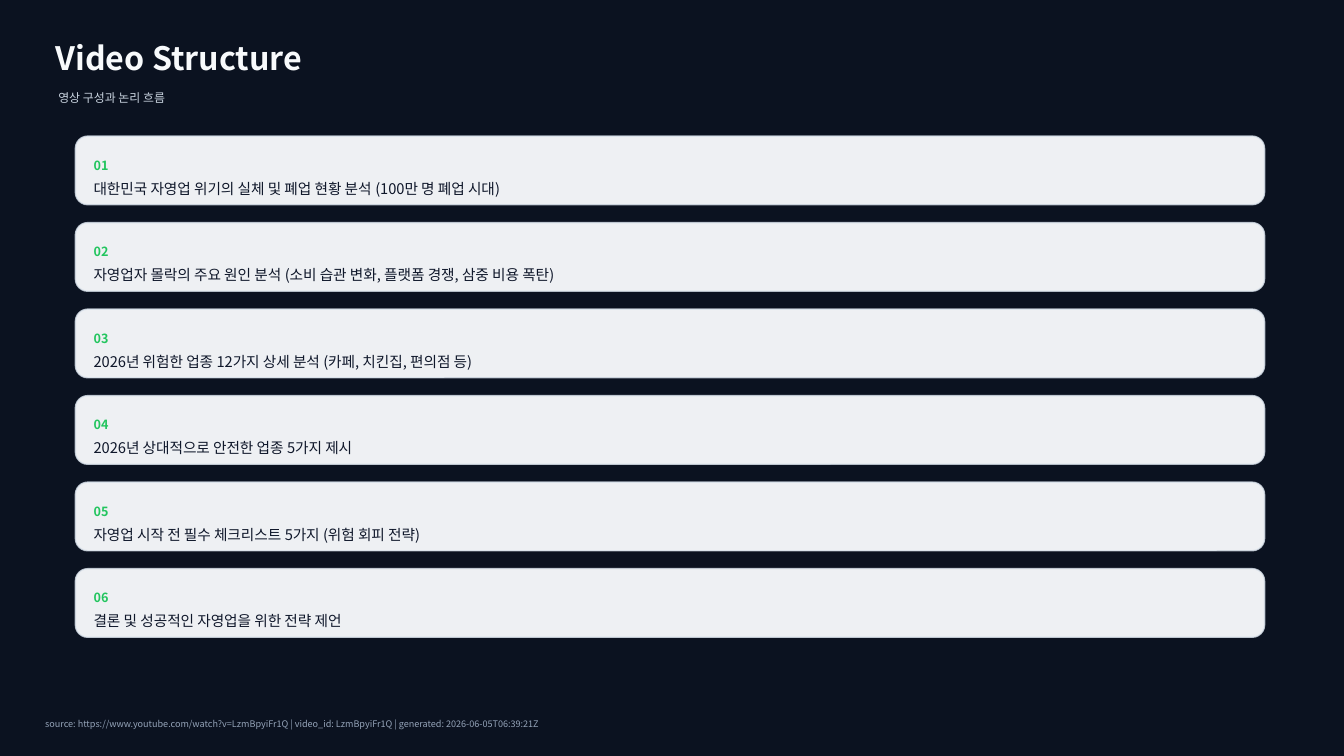
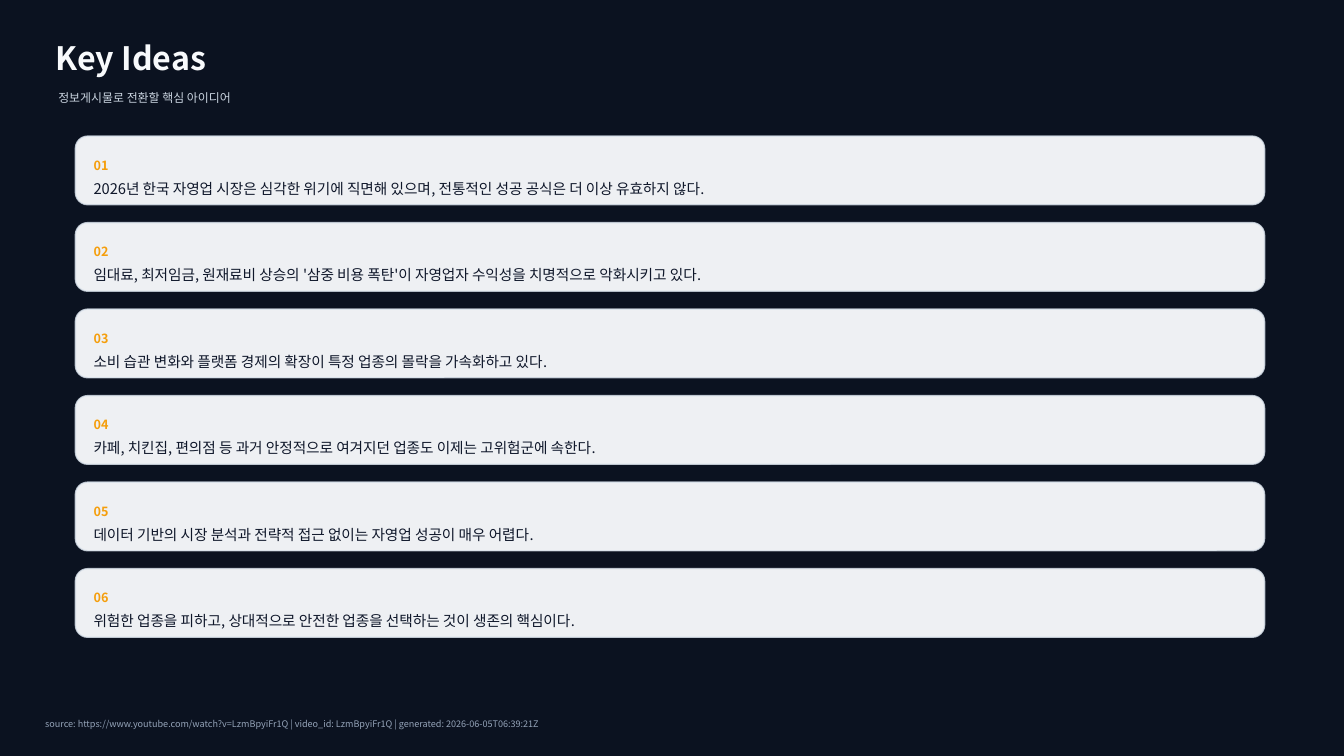
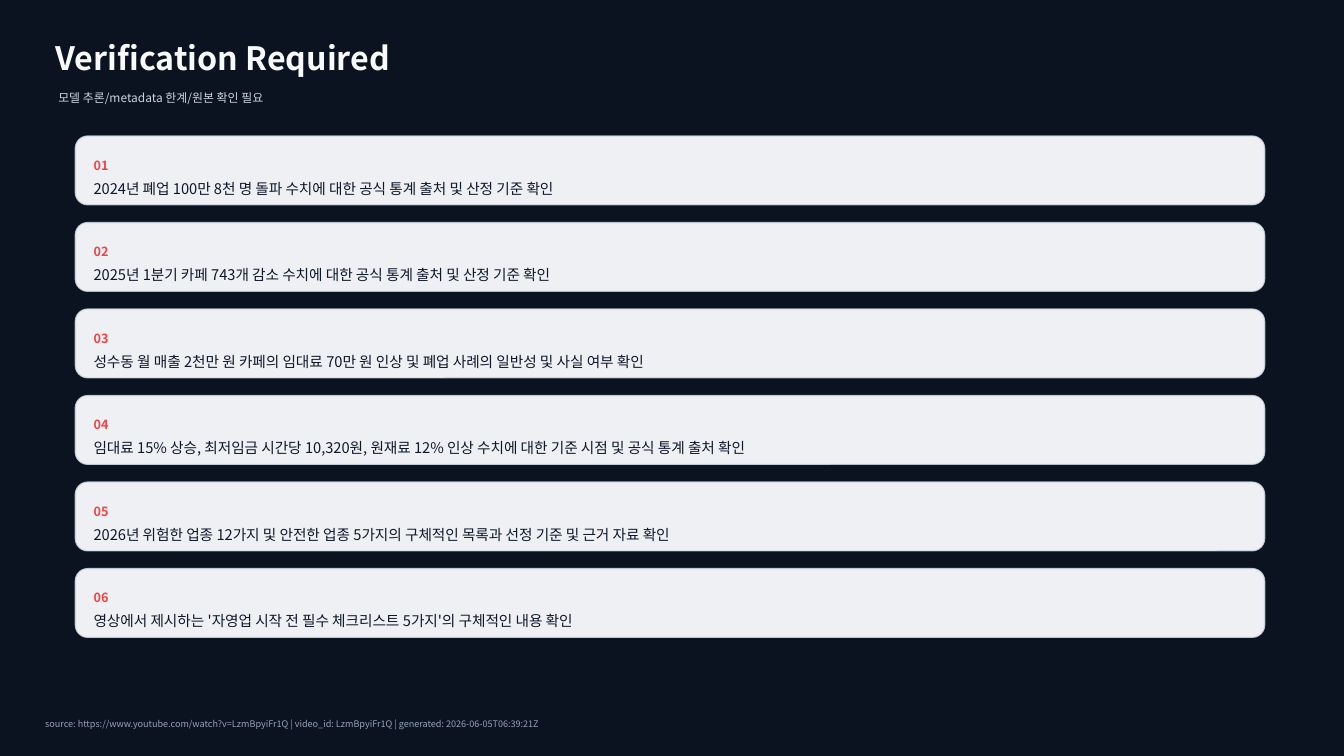
from pptx import Presentation
from pptx.dml.color import RGBColor as Rgb
from pptx.enum.shapes import MSO_SHAPE as Kind
from pptx.enum.text import MSO_ANCHOR as Anchor, MSO_AUTO_SIZE as Fit
from pptx.oxml.ns import qn
from pptx.util import Cm, Pt
from lxml.etree import SubElement as Sub

FACE = "Noto Sans CJK KR"
HUES = {
    "night": "0B1220", "paper": "F8FAFC", "mist": "CBD5E1", "edge": "D7E0EA",
    "ink": "0F172A", "slate": "94A3B8",
    "green": "22C55E", "amber": "F59E0B", "red": "EF4444",
}
FOOT = ("source: https://www.youtube.com/watch?v=LzmBpyiFr1Q | "
        "video_id: LzmBpyiFr1Q | generated: 2026-06-05T06:39:21Z")

PAGES = [
    ("Video Structure", "영상 구성과 논리 흐름", "green", [
        "대한민국 자영업 위기의 실체 및 폐업 현황 분석 (100만 명 폐업 시대)",
        "자영업자 몰락의 주요 원인 분석 (소비 습관 변화, 플랫폼 경쟁, 삼중 비용 폭탄)",
        "2026년 위험한 업종 12가지 상세 분석 (카페, 치킨집, 편의점 등)",
        "2026년 상대적으로 안전한 업종 5가지 제시",
        "자영업 시작 전 필수 체크리스트 5가지 (위험 회피 전략)",
        "결론 및 성공적인 자영업을 위한 전략 제언",
    ]),
    ("Key Ideas", "정보게시물로 전환할 핵심 아이디어", "amber", [
        "2026년 한국 자영업 시장은 심각한 위기에 직면해 있으며, 전통적인 성공 공식은 더 이상 유효하지 않다.",
        "임대료, 최저임금, 원재료비 상승의 '삼중 비용 폭탄'이 자영업자 수익성을 치명적으로 악화시키고 있다.",
        "소비 습관 변화와 플랫폼 경제의 확장이 특정 업종의 몰락을 가속화하고 있다.",
        "카페, 치킨집, 편의점 등 과거 안정적으로 여겨지던 업종도 이제는 고위험군에 속한다.",
        "데이터 기반의 시장 분석과 전략적 접근 없이는 자영업 성공이 매우 어렵다.",
        "위험한 업종을 피하고, 상대적으로 안전한 업종을 선택하는 것이 생존의 핵심이다.",
    ]),
    ("Verification Required", "모델 추론/metadata 한계/원본 확인 필요", "red", [
        "2024년 폐업 100만 8천 명 돌파 수치에 대한 공식 통계 출처 및 산정 기준 확인",
        "2025년 1분기 카페 743개 감소 수치에 대한 공식 통계 출처 및 산정 기준 확인",
        "성수동 월 매출 2천만 원 카페의 임대료 70만 원 인상 및 폐업 사례의 일반성 및 사실 여부 확인",
        "임대료 15% 상승, 최저임금 시간당 10,320원, 원재료 12% 인상 수치에 대한 기준 시점 및 공식 통계 출처 확인",
        "2026년 위험한 업종 12가지 및 안전한 업종 5가지의 구체적인 목록과 선정 기준 및 근거 자료 확인",
        "영상에서 제시하는 '자영업 시작 전 필수 체크리스트 5가지'의 구체적인 내용 확인",
    ]),
]

STYLES = {
    "title": {"size": Pt(23), "bold": True},
    "lead": {"size": Pt(8.5)},
    "mark": {"size": Pt(9), "bold": True},
    "item": {"size": Pt(10.5)},
    "foot": {"size": Pt(6.5)},
}
FRAME = {
    "auto_size": Fit.NONE, "word_wrap": True, "vertical_anchor": Anchor.MIDDLE,
    "margin_left": 0, "margin_right": 0, "margin_top": 0, "margin_bottom": 0,
}
LEFT, TOP, WIDE, HIGH, STEP = 1.9, 3.43, 29.97, 1.73, 2.18
PAD = 0.46


def apply(part, values):
    for name, value in values.items():
        setattr(part, name, value)


def place(*box):
    return [Cm(side) for side in box]


def write(slide, text, style, hue, *box):
    frame = slide.shapes.add_textbox(*place(*box)).text_frame
    apply(frame, FRAME)
    run = frame.paragraphs[0].add_run()
    run.text = text
    apply(run.font, {"name": FACE, **STYLES[style]})
    run.font.color.rgb = Rgb.from_string(HUES[hue])
    Sub(run.font._element, qn("a:ea"), typeface=FACE)


def tint(fill, hue, share):
    fill.solid()
    fill.fore_color.rgb = Rgb.from_string(HUES[hue])
    tone = fill._xPr.find(qn("a:solidFill"))[0]
    Sub(tone, qn("a:alpha"), val=str(share * 1000))


def card(slide, row, text, hue):
    top = TOP + row * STEP
    box = slide.shapes.add_shape(Kind.ROUNDED_RECTANGLE, *place(LEFT, top, WIDE, HIGH))
    box.adjustments[0] = 0.18
    box.shadow.inherit = False
    tint(box.fill, "paper", 96)
    tint(box.line.fill, "edge", 80)
    box.line.width = Pt(1)
    left, wide = LEFT + PAD, WIDE - 2 * PAD
    write(slide, f"{row + 1:02}", "mark", hue, left, top + 0.41, wide, 0.64)
    write(slide, text, "item", "ink", left, top + 1.27, wide, 0.1)


def page(deck, title, lead, hue, items):
    slide = deck.slides.add_slide(deck.slide_layouts[6])
    back = slide.background.fill
    back.solid()
    back.fore_color.rgb = Rgb.from_string(HUES["night"])
    write(slide, title, "title", "paper", 1.4, 0.89, 30.48, 1.14)
    write(slide, lead, "lead", "mist", 1.47, 2.11, 29.21, 0.71)
    for row, text in enumerate(items):
        card(slide, row, text, hue)
    write(slide, FOOT, "foot", "slate", 1.14, 17.91, 31.5, 0.64)


def main():
    deck = Presentation()
    apply(deck, {"slide_width": Cm(33.87), "slide_height": Cm(19.05)})
    for entry in PAGES:
        page(deck, *entry)
    deck.save("out.pptx")


if __name__ == "__main__":
    main()
